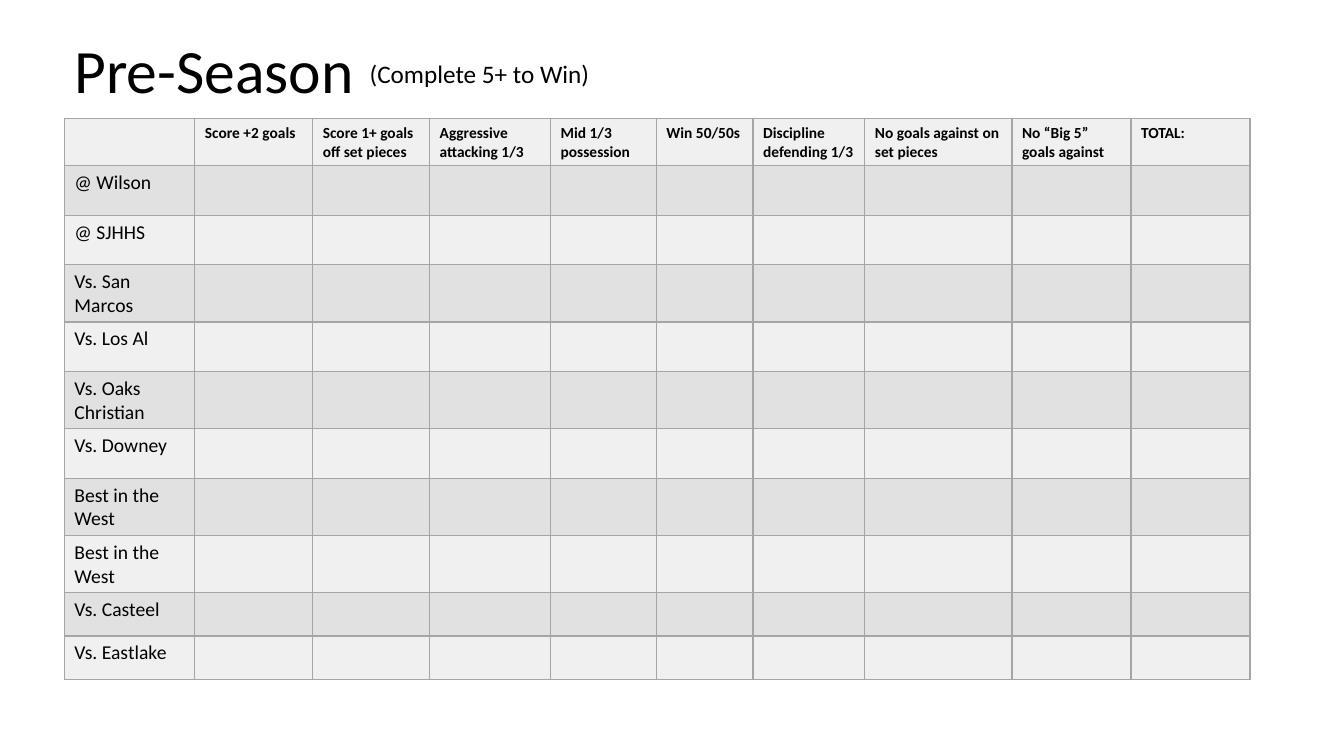
from lxml.etree import SubElement
from pptx import Presentation
from pptx.dml.color import RGBColor
from pptx.enum.text import MSO_ANCHOR
from pptx.oxml.ns import qn
from pptx.util import Pt

FONT = "Calibri"
BLACK, LIGHT, DARK, RULE = "000000", "F0F0F0", "E1E1E1", "A5A5A5"

GOALS = ["Score +2 goals", "Score 1+ goals off set pieces",
         "Aggressive attacking 1/3", "Mid 1/3 possession", "Win 50/50s",
         "Discipline defending 1/3", "No goals against on set pieces",
         "No “Big 5” goals against", "TOTAL:"]
GAMES = ["@ Wilson", "@ SJHHS", "Vs. San Marcos", "Vs. Los Al",
         "Vs. Oaks Christian", "Vs. Downey", "Best in the West",
         "Best in the West", "Vs. Casteel", "Vs. Eastlake"]
COLUMN_WIDTHS = [93.2, 84.2, 83.5, 86.4, 75.6, 69.1, 79.9, 105.1, 85, 85]
ROW_HEIGHTS = [33.2] + [35.4] * 8 + [31] * 2


def color(hex_string):
    return RGBColor.from_string(hex_string)


def write(frame, text, size=14, bold=False, spacing=1.0):
    paragraph = frame.paragraphs[0]
    paragraph.line_spacing = spacing
    run = paragraph.add_run()
    run.text = text
    run.font.name = FONT
    run.font.size = Pt(size)
    run.font.bold = bold
    run.font.color.rgb = color(BLACK)


def add_heading(slide, text, left, top, width, height, **text_format):
    frame = slide.shapes.add_textbox(
        Pt(left), Pt(top), Pt(width), Pt(height)).text_frame
    frame.word_wrap = True
    frame.vertical_anchor = MSO_ANCHOR.MIDDLE
    write(frame, text, **text_format)


def style_cell(cell, fill):
    """Fill the cell and rule its four sides."""
    properties = cell._tc.get_or_add_tcPr()
    for side in ("a:lnL", "a:lnR", "a:lnT", "a:lnB"):
        border = SubElement(properties, qn(side), w=str(Pt(1)))
        solid = SubElement(border, qn("a:solidFill"))
        SubElement(solid, qn("a:srgbClr"), val=RULE)
    cell.fill.solid()
    cell.fill.fore_color.rgb = color(fill)


def add_goal_table(slide, left, top):
    table = slide.shapes.add_table(
        len(ROW_HEIGHTS), len(COLUMN_WIDTHS), Pt(left), Pt(top),
        Pt(sum(COLUMN_WIDTHS)), Pt(sum(ROW_HEIGHTS))).table
    table.first_row = table.horz_banding = False
    for column, width in zip(table.columns, COLUMN_WIDTHS):
        column.width = Pt(width)
    for index, (row, height) in enumerate(zip(table.rows, ROW_HEIGHTS)):
        row.height = Pt(height)
        for cell in row.cells:
            style_cell(cell, DARK if index % 2 else LIGHT)
    for index, goal in enumerate(GOALS, 1):
        write(table.cell(0, index).text_frame, goal, size=11, bold=True)
    for index, game in enumerate(GAMES, 1):
        write(table.cell(index, 0).text_frame, game)


def main():
    presentation = Presentation()
    presentation.slide_width, presentation.slide_height = Pt(960), Pt(540)
    slide = presentation.slides.add_slide(presentation.slide_layouts[6])
    add_heading(slide, "Pre-Season", 46, 0, 312, 104.4, size=44, spacing=0.9)
    add_heading(slide, "(Complete 5+ to Win)", 257, 37.6, 480, 29, size=18)
    add_goal_table(slide, 46, 84.8)
    presentation.save("out.pptx")


if __name__ == "__main__":
    main()
